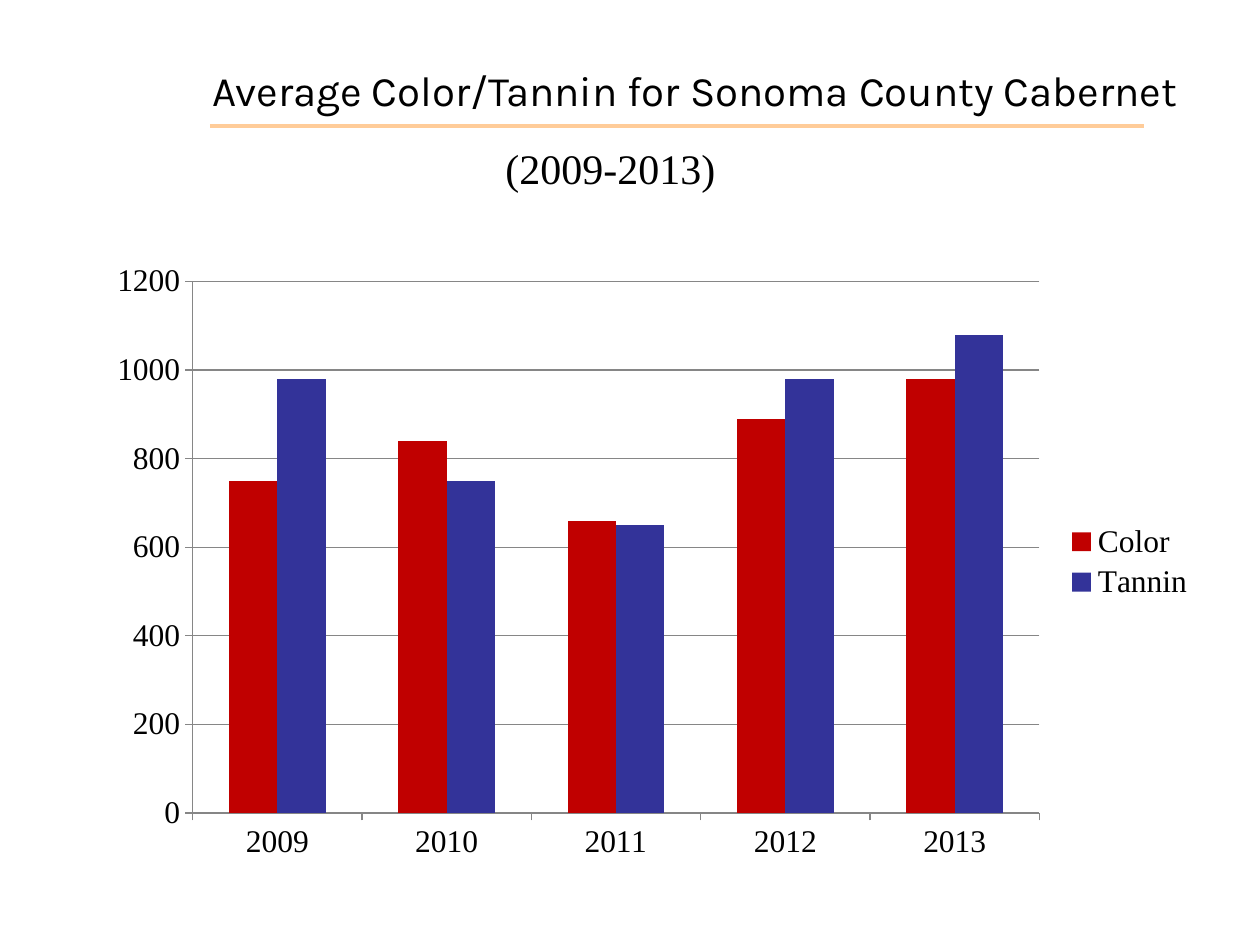
import pptx
import pptx.chart.data
import pptx.dml.color
import pptx.enum.chart
import pptx.enum.shapes
import pptx.enum.text
import pptx.oxml
import pptx.oxml.ns
import pptx.util

PX = 914400 / 126
SERIF = "Times New Roman"
BLACK = "000000"
AXIS_GREY = "868686"
YEARS = ["2009", "2010", "2011", "2012", "2013"]
MEASURES = [
    ("Color", [750, 840, 660, 890, 980], "C00000"),
    ("Tannin", [980, 750, 650, 980, 1080], "333399"),
]


def px(*lengths):
    return [pptx.util.Emu(round(length * PX)) for length in lengths]


def color(hex_code):
    return pptx.dml.color.RGBColor.from_string(hex_code)


def style_font(font, name, size):
    font.name = name
    font.size = pptx.util.Pt(size)
    font.bold = False
    font.color.rgb = color(BLACK)


def style_line(line, hex_code, width):
    line.color.rgb = color(hex_code)
    line.width = pptx.util.Pt(width)


def add_run(paragraph, text, font_name, size):
    run = paragraph.add_run()
    run.text = text
    style_font(run.font, font_name, size)


def set_title(slide, text):
    title = slide.shapes.title
    title.left, title.top, title.width, title.height = px(200, 32, 1039, 116)
    frame = title.text_frame
    frame.auto_size = pptx.enum.text.MSO_AUTO_SIZE.NONE
    frame.vertical_anchor = pptx.enum.text.MSO_ANCHOR.MIDDLE
    heading = frame.paragraphs[0]
    heading.alignment = pptx.enum.text.PP_ALIGN.LEFT
    add_run(heading, text, "Karla", 24)


def add_title_rule(slide):
    rule = slide.shapes.add_connector(
        pptx.enum.shapes.MSO_CONNECTOR.STRAIGHT, *px(210, 126, 1144, 126))
    style_line(rule.line, "FFCC99", 2)
    properties = rule._element.spPr
    properties.append(pptx.oxml.parse_xml(
        f"<a:effectLst {pptx.oxml.ns.nsdecls('a')}/>"))


def add_period(slide, text):
    period = slide.shapes.add_textbox(*px(493, 136, 237, 63))
    frame = period.text_frame
    frame.word_wrap = False
    frame.auto_size = pptx.enum.text.MSO_AUTO_SIZE.SHAPE_TO_FIT_TEXT
    add_run(frame.paragraphs[0], text, SERIF, 24)


def add_measures_chart(slide):
    data = pptx.chart.data.CategoryChartData()
    data.categories = YEARS
    for name, values, _ in MEASURES:
        data.add_series(name, values)
    chart = slide.shapes.add_chart(
        pptx.enum.chart.XL_CHART_TYPE.COLUMN_CLUSTERED,
        *px(95, 252, 1113, 620), data).chart
    style_font(chart.font, SERIF, 18)
    chart.has_title = False

    plot = chart.plots[0]
    plot.vary_by_categories = False
    plot.gap_width = 150
    plot.overlap = 0
    for series, (_, _, fill) in zip(plot.series, MEASURES):
        series.invert_if_negative = False
        series.format.fill.solid()
        series.format.fill.fore_color.rgb = color(fill)

    for axis in (chart.category_axis, chart.value_axis):
        axis.major_tick_mark = pptx.enum.chart.XL_TICK_MARK.OUTSIDE
        axis.minor_tick_mark = pptx.enum.chart.XL_TICK_MARK.NONE
        style_line(axis.format.line, AXIS_GREY, 0.75)
    scale = chart.value_axis
    scale.minimum_scale, scale.maximum_scale, scale.major_unit = 0, 1200, 200
    scale.has_major_gridlines = True
    style_line(scale.major_gridlines.format.line, AXIS_GREY, 0.75)

    chart.has_legend = True
    chart.legend.position = pptx.enum.chart.XL_LEGEND_POSITION.RIGHT
    chart.legend.include_in_layout = False


def main():
    deck = pptx.Presentation()
    deck.slide_width, deck.slide_height = px(1260, 945)
    slide = deck.slides.add_slide(deck.slide_layouts.get_by_name("Title Only"))
    set_title(slide, "Average Color/Tannin for Sonoma County Cabernet")
    add_title_rule(slide)
    add_measures_chart(slide)
    add_period(slide, "(2009-2013)")
    deck.save("out.pptx")


if __name__ == "__main__":
    main()
